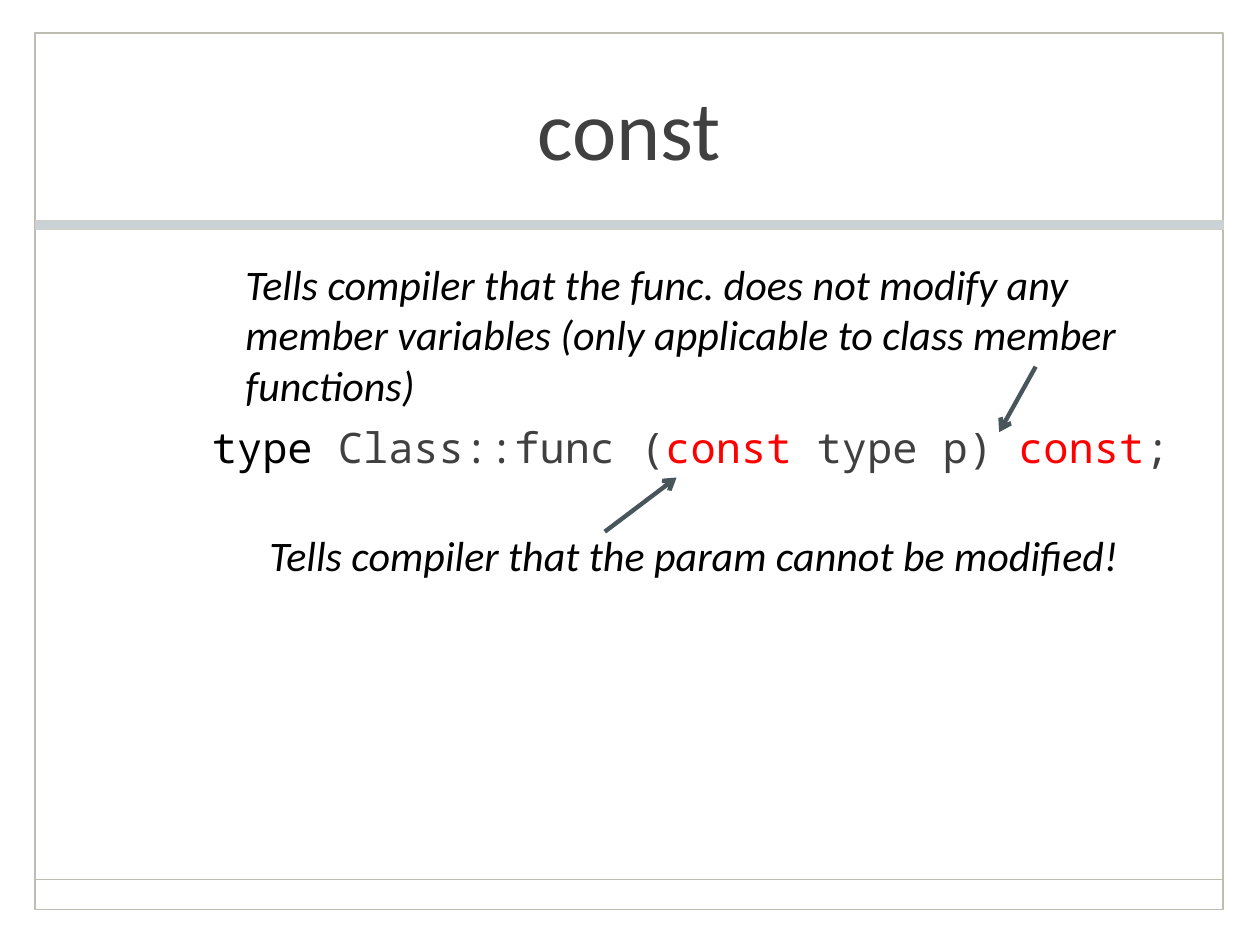
from lxml.etree import SubElement
from pptx import Presentation
from pptx.dml.color import RGBColor
from pptx.enum.shapes import MSO_CONNECTOR, MSO_SHAPE
from pptx.enum.text import MSO_ANCHOR, PP_ALIGN
from pptx.oxml.ns import qn
from pptx.util import Pt


def color(value):
    return RGBColor.from_string(value)


def add_span(para, text, size, font, value, italic=False):
    span = para.add_run()
    span.text = text
    span.font.size = Pt(size)
    span.font.name = font
    span.font.color.rgb = color(value)
    span.font.italic = italic


deck = Presentation()
deck.slide_width, deck.slide_height = Pt(720), Pt(540)
page = deck.slides.add_slide(deck.slide_layouts[5])

# Frame and the band under the title
frame_left, frame_width = 20.16, 678.96
for top, height, fill, line, weight in [
    (18.72, 501.12, None, "BEBDB2", 1),
    (126, 5.04, "CBD2D5", "D1D0C8", 0.25),
]:
    panel = page.shapes.add_shape(
        MSO_SHAPE.RECTANGLE, Pt(frame_left), Pt(top), Pt(frame_width), Pt(height))
    panel.shadow.inherit = False
    if fill:
        panel.fill.solid()
        panel.fill.fore_color.rgb = color(fill)
    else:
        panel.fill.background()
    panel.line.color.rgb = color(line)
    panel.line.width = Pt(weight)

# Title
title = page.shapes.title
title.left, title.top, title.width, title.height = Pt(70.56), Pt(19.44), Pt(578.16), Pt(105.84)
title.text_frame.vertical_anchor = MSO_ANCHOR.MIDDLE
title_para = title.text_frame.paragraphs[0]
title_para.alignment = PP_ALIGN.CENTER
add_span(title_para, "const", 48, "Calibri", "404040")

# Code line and the two explanations
code = [
    ("type ", "000000"),
    ("Class::func (", "404040"),
    ("const ", "FF0000"),
    ("type p) ", "404040"),
    ("const", "FF0000"),
    (";", "404040"),
]
function_note = ("Tells compiler that the func. does not modify any member variables "
                 "(only applicable to class member functions)")
param_note = "Tells compiler that the param cannot be modified!"
for left, top, width, height, spans, font, italic in [
    (114, 237.6, 570.72, 59.76, code, "Noto Sans Mono", False),
    (146.88, 298.8, 551.52, 36, [(param_note, "000000")], "Calibri", True),
    (133.2, 144, 551.52, 65.52, [(function_note, "000000")], "Calibri", True),
]:
    box = page.shapes.add_textbox(Pt(left), Pt(top), Pt(width), Pt(height))
    box.text_frame.word_wrap = True
    para = box.text_frame.paragraphs[0]
    for text, value in spans:
        add_span(para, text, 24, font, value, italic)

# Footer rule and the arrows from each explanation to its keyword
for start_x, start_y, end_x, end_y, value, weight, has_head in [
    (frame_left, 502.56, frame_left + frame_width, 502.56, "BEBDB2", 1, False),
    (345.6, 303.84, 386.64, 272.88, "48565C", 2.5, True),
    (591.84, 209.52, 570.96, 246.96, "48565C", 2.5, True),
]:
    line = page.shapes.add_connector(
        MSO_CONNECTOR.STRAIGHT, Pt(start_x), Pt(start_y), Pt(end_x), Pt(end_y))
    line.line.color.rgb = color(value)
    line.line.width = Pt(weight)
    if has_head:
        SubElement(line.line._get_or_add_ln(), qn("a:tailEnd"), type="arrow")
    SubElement(line._element.spPr, qn("a:effectLst"))

deck.save("out.pptx")
